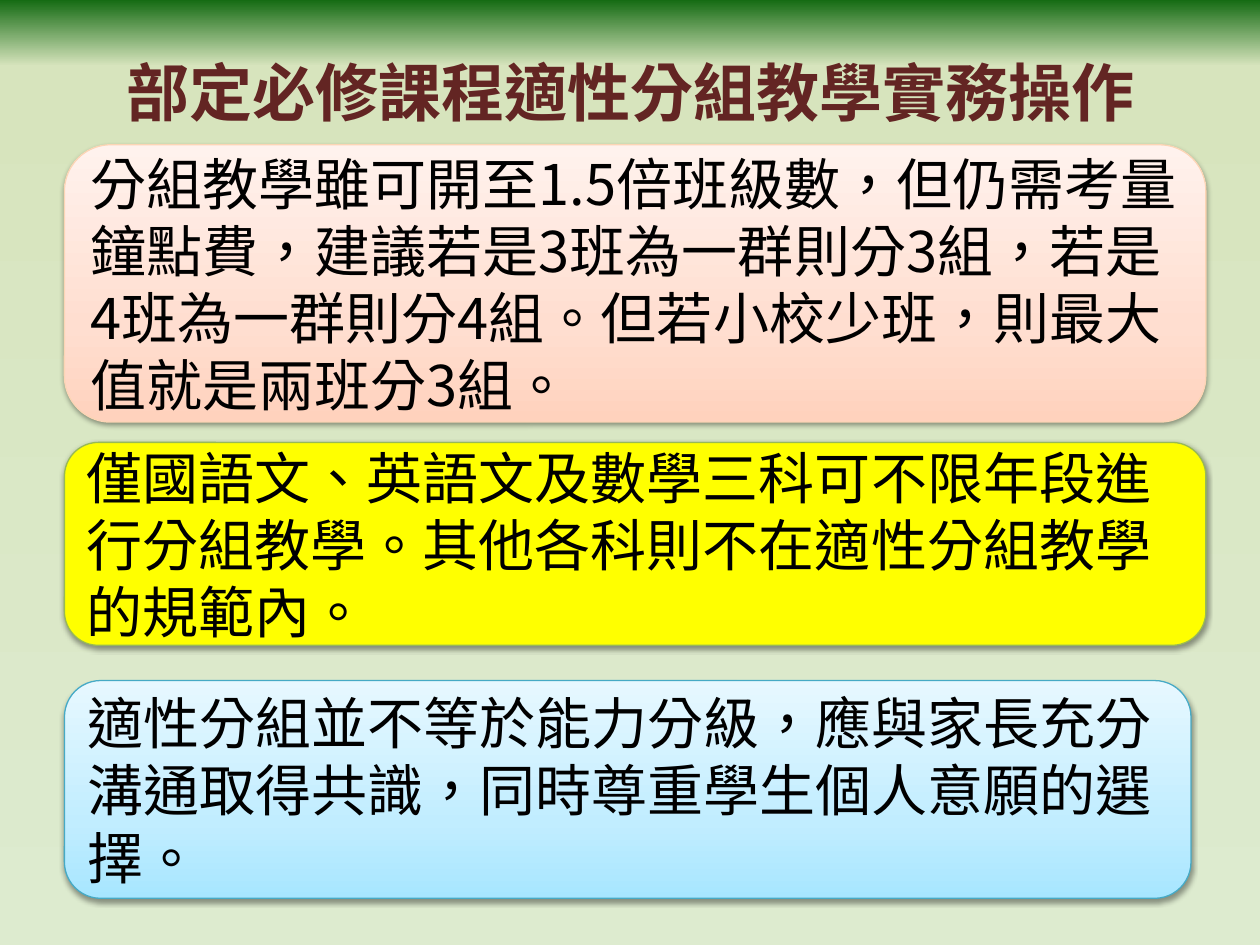
from lxml.etree import SubElement
from pptx import Presentation
from pptx.dml.color import RGBColor
from pptx.enum.lang import MSO_LANGUAGE_ID as Language
from pptx.enum.shapes import MSO_SHAPE as Shape
from pptx.enum.text import MSO_ANCHOR as Anchor, MSO_AUTO_SIZE as AutoSize, PP_ALIGN as Align
from pptx.oxml.ns import qn
from pptx.util import Cm, Pt

FONT = "Noto Sans CJK SC"
COLORS = {
    "title": "632523",
    "text": "000000",
    "shadow": "000000",
    "background": [(0, "DDEBCF"), (93, "D7E4BD"), (100, "156B13")],
    "peach": [(0, "FFD2BD"), (35, "FFDED0"), (100, "FFF2ED")],
    "peach_line": "FCD5B5",
    "yellow": "FFFF00",
    "yellow_line": "98B955",
    "blue": [(0, "A7E6FF"), (35, "C1EDFF"), (100, "E7F8FF")],
    "blue_line": "46AAC5",
}
TITLE = "部定必修課程適性分組教學實務操作"
TITLE_BOX = (1.27, 0.76, 22.86, 2.16)
PANELS = [
    ((1.3, 2.92, 23.01, 5.59), "peach",
     "分組教學雖可開至1.5倍班級數，但仍需考量鐘點費，建議若是3班為一群則分3組，"
     "若是4班為一群則分4組。但若小校少班，則最大值就是兩班分3組。"),
    ((1.3, 8.92, 23.01, 4.09), "yellow",
     "僅國語文、英語文及數學三科可不限年段進行分組教學。其他各科則不在適性分組教學的規範內。"),
    ((1.3, 13.72, 22.71, 4.39), "blue",
     "適性分組並不等於能力分級，應與家長充分溝通取得共識，同時尊重學生個人意願的選擇。"),
]


def paint(fill, owner, color):
    if isinstance(color, str):
        fill.solid()
        fill.fore_color.rgb = RGBColor.from_string(color)
        return
    fill.gradient()
    fill.gradient_angle = 90
    stops = owner.find(".//" + qn("a:gsLst"))
    for stop in list(stops):
        stops.remove(stop)
    for position, value in color:
        stop = SubElement(stops, qn("a:gs"), pos=str(position * 1000))
        SubElement(stop, qn("a:srgbClr"), val=value)


def add_shadow(shape):
    shape.shadow.inherit = False
    effects = shape._element.spPr.find(qn("a:effectLst"))
    shadow = SubElement(effects, qn("a:outerShdw"), blurRad="40000", dist="20000",
                        dir="5400000", rotWithShape="0")
    color = SubElement(shadow, qn("a:srgbClr"), val=COLORS["shadow"])
    SubElement(color, qn("a:alpha"), val="38000")


def write_text(shape, text, size=32, color="text", bold=False, align=Align.LEFT):
    frame = shape.text_frame
    frame.word_wrap = True
    frame.auto_size = AutoSize.NONE
    frame.vertical_anchor = Anchor.MIDDLE
    paragraph = frame.paragraphs[0]
    paragraph.alignment = align
    run = paragraph.add_run()
    run.text = text
    font = run.font
    font.size = Pt(size)
    font.bold = bold
    font.color.rgb = RGBColor.from_string(COLORS[color])
    font.name = FONT
    font.language_id = Language.TRADITIONAL_CHINESE
    SubElement(run._r.get_or_add_rPr(), qn("a:ea"), typeface=FONT)


def place_title(slide, box):
    title = slide.shapes.title
    title.left, title.top, title.width, title.height = map(Cm, box)
    write_text(title, TITLE, size=36, color="title", bold=True, align=Align.CENTER)


def add_panel(slide, box, color, text):
    panel = slide.shapes.add_shape(Shape.ROUNDED_RECTANGLE, *map(Cm, box))
    paint(panel.fill, panel._element, COLORS[color])
    panel.line.color.rgb = RGBColor.from_string(COLORS[color + "_line"])
    panel.line.width = Pt(0.75)
    add_shadow(panel)
    write_text(panel, text)


def main():
    presentation = Presentation()
    presentation.slide_width, presentation.slide_height = Cm(25.4), Cm(19.05)
    slide = presentation.slides.add_slide(presentation.slide_layouts[5])
    paint(slide.background.fill, slide._element, COLORS["background"])
    place_title(slide, TITLE_BOX)
    for box, color, text in PANELS:
        add_panel(slide, box, color, text)
    presentation.save("out.pptx")


if __name__ == "__main__":
    main()
